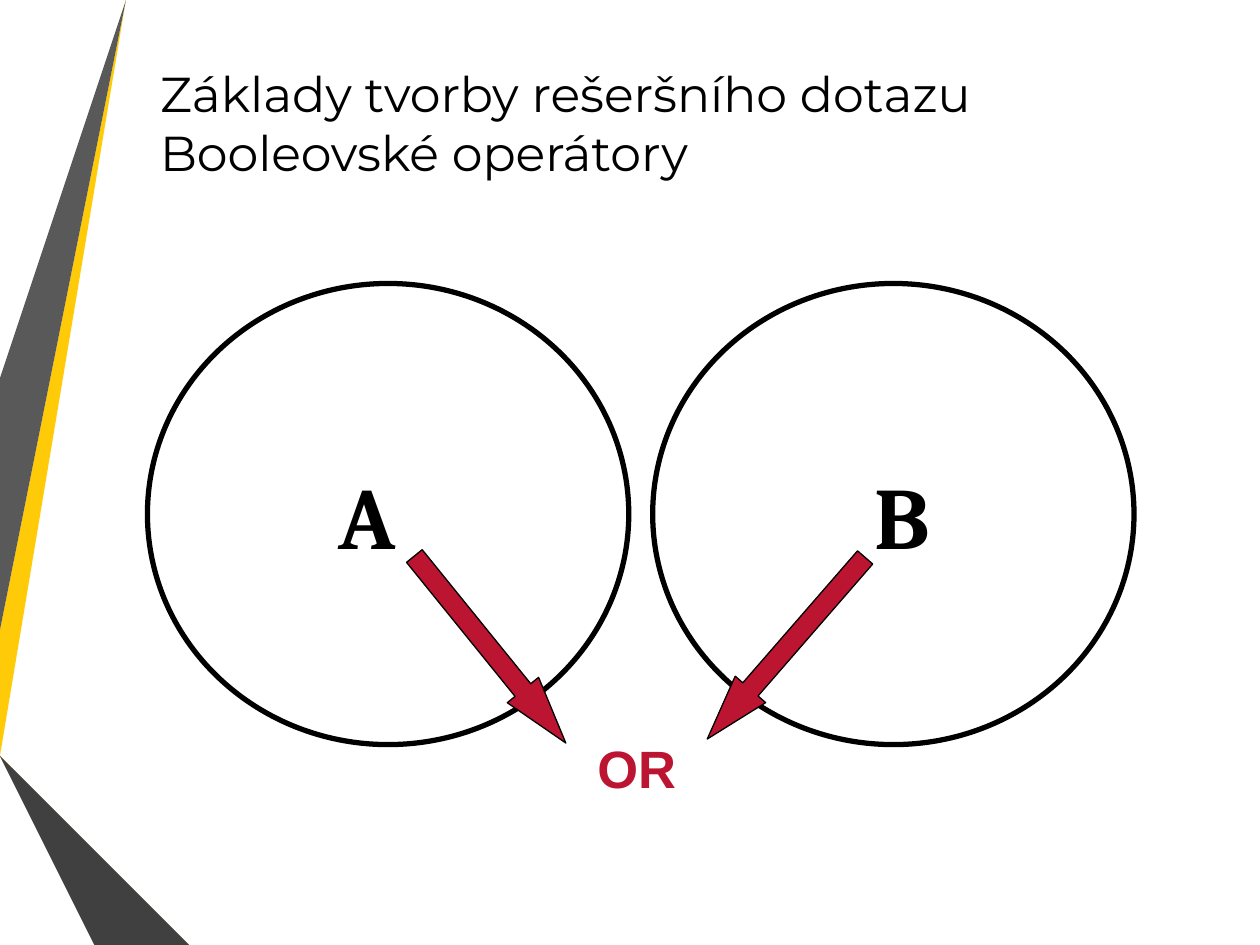
from copy import deepcopy

from pptx import Presentation
from pptx.dml.color import RGBColor
from pptx.enum.shapes import MSO_SHAPE
from pptx.enum.text import MSO_ANCHOR, MSO_AUTO_SIZE, PP_ALIGN
from pptx.oxml.ns import qn
from pptx.util import Inches, Pt

BLACK = RGBColor(0x00, 0x00, 0x00)
RED = RGBColor(0xBB, 0x15, 0x31)
YELLOW = RGBColor(0xFF, 0xCA, 0x08)
GOLD = RGBColor(0xC5, 0x9B, 0x00)
OLIVE = RGBColor(0x84, 0x67, 0x00)
GREY = RGBColor(0x59, 0x59, 0x59)
DARK_GREY = RGBColor(0x40, 0x40, 0x40)
CHARCOAL = RGBColor(0x26, 0x26, 0x26)

RIBBONS = [
    (YELLOW, [(0, 5.44), (0, 5.75), (0.22, 5.79), (1.17, 0), (0.89, 0)]),
    (GREY, [(0.83, 0), (0.55, 0), (0, 3.36), (0, 5.06)]),
    (CHARCOAL, [(0, 6.19), (0, 6.21), (0.93, 7.5), (0.99, 7.5)]),
    (OLIVE, [(0, 5.79), (0, 5.8), (1.56, 7.5), (1.63, 7.5)]),
    (GOLD, [(0, 5.79), (1.63, 7.5), (2.33, 7.5), (0.22, 5.79), (0, 5.75)]),
    (DARK_GREY, [(0, 6.19), (0.99, 7.5), (1.51, 7.5), (0, 5.86)]),
]
CIRCLE_LEFTS = (1.17, 5.18)
ARROWS = [(3.73, 4.2, 321, 1.69), (6.08, 4.19, 41, 1.63)]
LETTERS = [("A", 2.43), ("B", 6.68)]


def set_values(target, values):
    for name, value in values.items():
        setattr(target, name, value)


def place(shape, left, top, width, height):
    lengths = zip(("left", "top", "width", "height"), (left, top, width, height))
    set_values(shape, {name: Inches(length) for name, length in lengths})


def write_text(frame, text, alignment, font_values, color):
    para = frame.paragraphs[0]
    para.text = text
    para.alignment = alignment
    for span in para.runs:
        set_values(span.font, font_values)
        span.font.color.rgb = color
    for line_break in para._p.findall(qn("a:br")):
        line_break.append(deepcopy(para.runs[0]._r.rPr))


def add_ribbon(page, color, points):
    builder = page.shapes.build_freeform(*points[0], scale=Inches(1))
    builder.add_line_segments(points[1:], close=True)
    ribbon = builder.convert_to_shape()
    ribbon.shadow.inherit = False
    ribbon.fill.solid()
    ribbon.fill.fore_color.rgb = color
    ribbon.line.fill.background()


def format_title(title):
    place(title, 1.17, 0.5, 8.43, 0.94)
    set_values(title.text_frame, {
        "vertical_anchor": MSO_ANCHOR.MIDDLE,
        "auto_size": MSO_AUTO_SIZE.NONE,
        "word_wrap": True,
    })
    write_text(title.text_frame, "Základy tvorby rešeršního dotazu\nBooleovské operátory",
               PP_ALIGN.LEFT, {"size": Pt(28), "name": "Montserrat"}, BLACK)


def add_outlined(page, kind, bounds, line_width):
    shape = page.shapes.add_shape(kind, *map(Inches, bounds))
    shape.shadow.inherit = False
    shape.line.color.rgb = BLACK
    shape.line.width = Pt(line_width)
    return shape


def add_circle(page, left):
    circle = add_outlined(page, MSO_SHAPE.OVAL, (left, 2.25, 3.82, 3.66), 3)
    circle.fill.background()


def add_arrow(page, left, top, rotation, head):
    arrow = add_outlined(page, MSO_SHAPE.DOWN_ARROW, (left, top, 0.32, 1.91), 0.75)
    arrow.rotation = rotation
    arrow.adjustments[0] = 0.5
    arrow.adjustments[1] = head
    arrow.fill.solid()
    arrow.fill.fore_color.rgb = RED


def add_label(page, text, bounds, alignment, size, font, color, margin=0.1):
    box = page.shapes.add_textbox(*map(Inches, bounds))
    set_values(box.text_frame, {"word_wrap": True, "margin_left": Inches(margin)})
    write_text(box.text_frame, text, alignment,
               {"size": Pt(size), "name": font, "bold": True}, color)


def main():
    deck = Presentation()
    set_values(deck, {"slide_width": Inches(10), "slide_height": Inches(7.5)})
    page = deck.slides.add_slide(deck.slide_layouts[5])
    format_title(page.shapes.title)
    for color, points in RIBBONS:
        add_ribbon(page, color, points)
    for left in CIRCLE_LEFTS:
        add_circle(page, left)
    for arrow in ARROWS:
        add_arrow(page, *arrow)
    for letter, left in LETTERS:
        add_label(page, letter, (left, 3.62, 0.96, 0.94), PP_ALIGN.CENTER, 50, "Cambria", BLACK)
    add_label(page, "OR", (4.14, 5.79, 1.61, 0.61), PP_ALIGN.JUSTIFY, 30, "Arial", RED, 0.6)
    deck.save("out.pptx")


if __name__ == "__main__":
    main()
